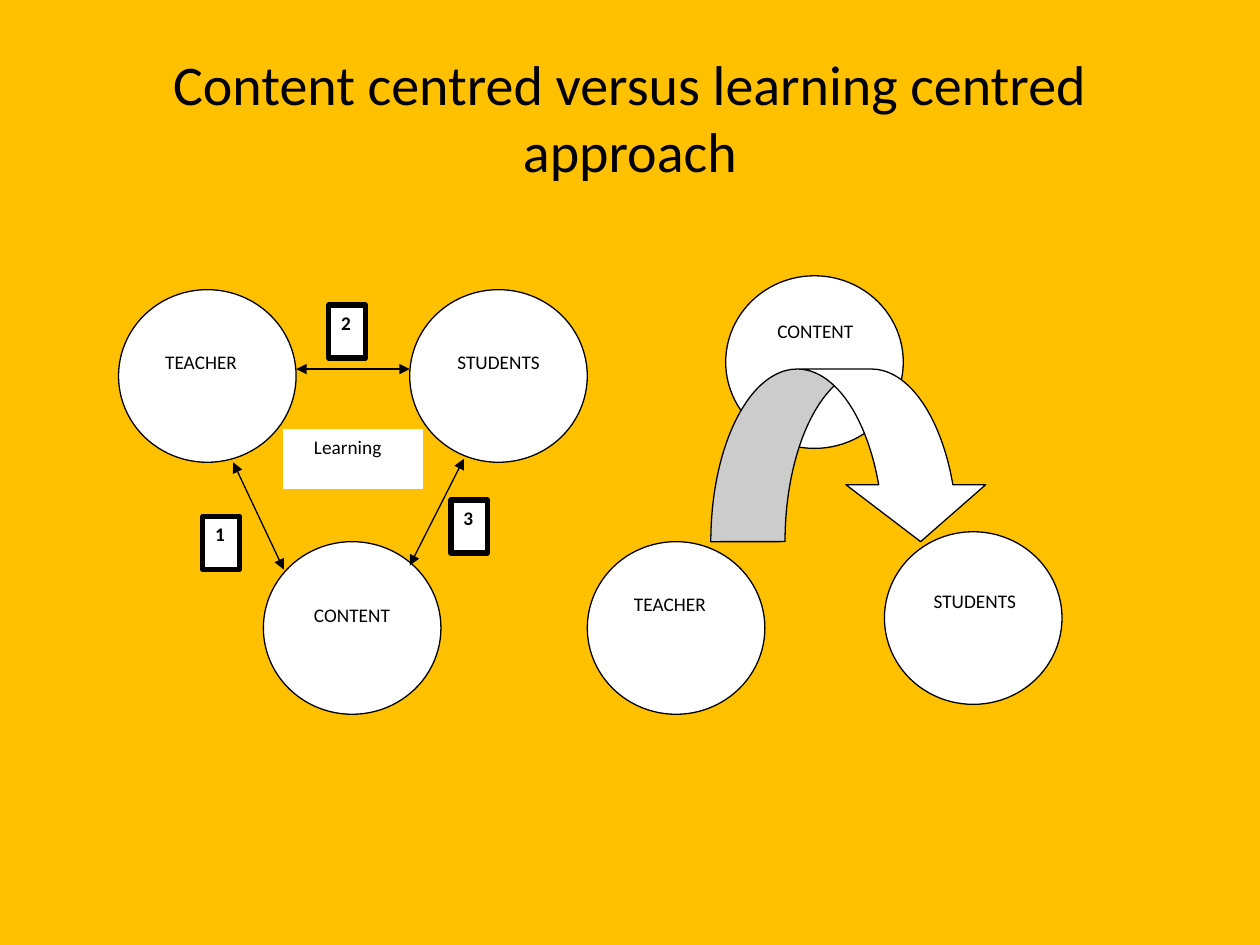
from dataclasses import dataclass

from lxml import etree
from pptx import Presentation
from pptx import util as u
from pptx.dml.color import RGBColor
from pptx.enum import shapes, text
from pptx.oxml.ns import qn

HUES = {"back": "FFC000", "ink": "000000", "paper": "FFFFFF"}
FONT = "Calibri"
KIND = shapes.MSO_SHAPE


@dataclass(frozen=True)
class Style:
    """Look shared by one family of shapes; lengths in cm, line in points."""
    kind: int
    wide: float
    high: float
    edge: str = "ink"
    line: float = 0.75
    inset: float = 0.25
    bold: bool = False


@dataclass(frozen=True)
class Item:
    left: float
    top: float
    words: str = ""


@dataclass(frozen=True)
class Link:
    x1: float
    y1: float
    x2: float
    y2: float


DISC = Style(KIND.OVAL, 3.58, 3.48)
LABEL = Style(KIND.RECTANGLE, 2.79, 1.19, edge="paper", inset=0.61)
BADGE = Style(KIND.RECTANGLE, 0.74, 1.07, line=3, bold=True)
ARROW = Style(KIND.CURVED_DOWN_ARROW, 5.64, 3.48)

# Learning centred side
CYCLE = [Item(2.39, 5.84), Item(5.31, 10.92), Item(8.26, 5.84)]
LINKS = [
    Link(5.97, 7.44, 8.26, 7.44),
    Link(9.35, 9.25, 8.26, 11.4),
    Link(4.7, 9.32, 5.72, 11.48),
]
ROLES = [
    Item(2.72, 6.93, "TEACHER"),
    Item(8.61, 6.93, "STUDENTS"),
    Item(5.72, 12.04, "CONTENT"),
    Item(5.72, 8.66, "Learning"),
]
STEPS = [Item(4.09, 10.41, "1"), Item(6.63, 6.15, "2"), Item(9.09, 10.08, "3")]

# Content centred side
CHAIN = [Item(11.84, 10.92), Item(14.63, 5.56), Item(17.83, 10.72)]
PARTS = [
    Item(12.17, 11.81, "TEACHER"),
    Item(18.21, 11.76, "STUDENTS"),
    Item(15.06, 6.32, "CONTENT"),
]


def hue(name: str) -> RGBColor:
    return RGBColor.from_string(HUES[name])


def set_font(para, size: float, bold: bool = False) -> None:
    font = para.font
    font.name, font.size, font.bold = FONT, u.Pt(size), bold
    font.color.rgb = hue("ink")


def draw(slide, style: Style, item: Item):
    shape = slide.shapes.add_shape(
        style.kind, u.Cm(item.left), u.Cm(item.top),
        u.Cm(style.wide), u.Cm(style.high))
    shape.shadow.inherit = False
    shape.fill.solid()
    shape.fill.fore_color.rgb = hue("paper")
    shape.line.color.rgb = hue(style.edge)
    shape.line.width = u.Pt(style.line)
    if item.words:
        frame = shape.text_frame
        frame.word_wrap = True
        frame.vertical_anchor = text.MSO_ANCHOR.TOP
        frame.margin_left = u.Cm(style.inset)
        para = frame.paragraphs[0]
        para.text = item.words
        para.alignment = text.PP_ALIGN.LEFT
        para.space_after = u.Pt(10)
        set_font(para, 11, style.bold)
    return shape


def draw_all(slide, style: Style, items: list[Item]) -> None:
    for item in items:
        draw(slide, style, item)


def join(slide, link: Link) -> None:
    ends = [u.Cm(v) for v in (link.x1, link.y1, link.x2, link.y2)]
    line = slide.shapes.add_connector(shapes.MSO_CONNECTOR.STRAIGHT, *ends)
    line.line.color.rgb = hue("ink")
    line.line.width = u.Pt(0.75)
    stroke = line.line._get_or_add_ln()
    for end in ("a:headEnd", "a:tailEnd"):
        etree.SubElement(stroke, qn(end), type="triangle")
    etree.SubElement(line._element.spPr, qn("a:effectLst"))


def main() -> None:
    deck = Presentation()
    deck.slide_width, deck.slide_height = u.Cm(25.4), u.Cm(19.05)
    slide = deck.slides.add_slide(deck.slide_layouts[5])
    slide.background.fill.solid()
    slide.background.fill.fore_color.rgb = hue("back")

    # Title
    title = slide.shapes.title
    title.left, title.top = u.Cm(1.27), u.Cm(0.76)
    title.width, title.height = u.Cm(22.86), u.Cm(3.18)
    frame = title.text_frame
    frame.text = "Content centred versus learning centred approach"
    frame.auto_size = text.MSO_AUTO_SIZE.NONE
    frame.vertical_anchor = text.MSO_ANCHOR.MIDDLE
    para = frame.paragraphs[0]
    para.alignment = text.PP_ALIGN.CENTER
    set_font(para, 32)

    # Learning centred cycle
    draw_all(slide, DISC, CYCLE)
    for link in LINKS:
        join(slide, link)
    draw_all(slide, LABEL, ROLES)
    draw_all(slide, BADGE, STEPS)

    # Content centred chain
    draw_all(slide, DISC, CHAIN)
    draw_all(slide, LABEL, PARTS)
    arrow = draw(slide, ARROW, Item(14.33, 7.44))
    for i, bend in enumerate((0.43, 0.86, 0.33)):
        arrow.adjustments[i] = bend

    deck.save("out.pptx")


if __name__ == "__main__":
    main()
